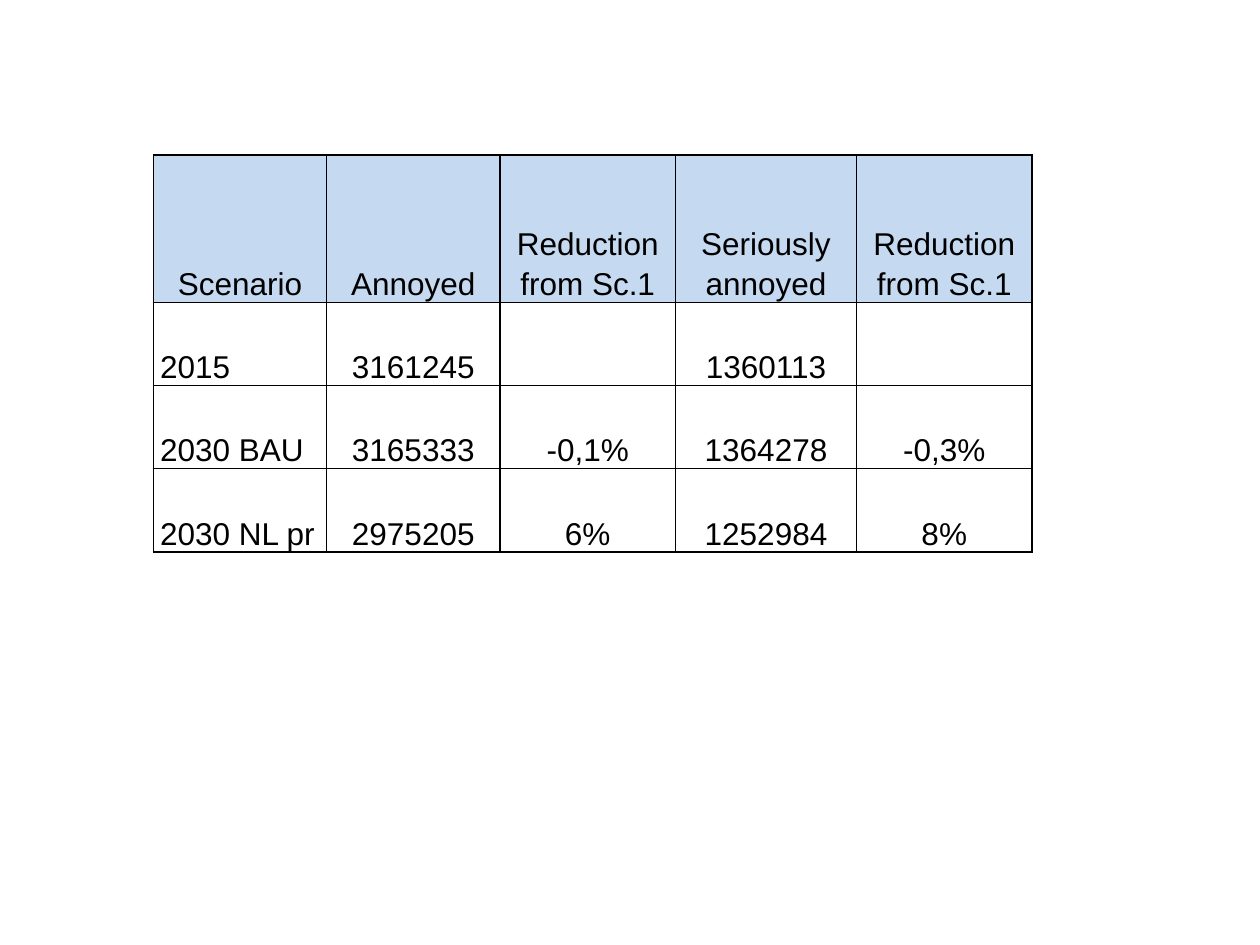
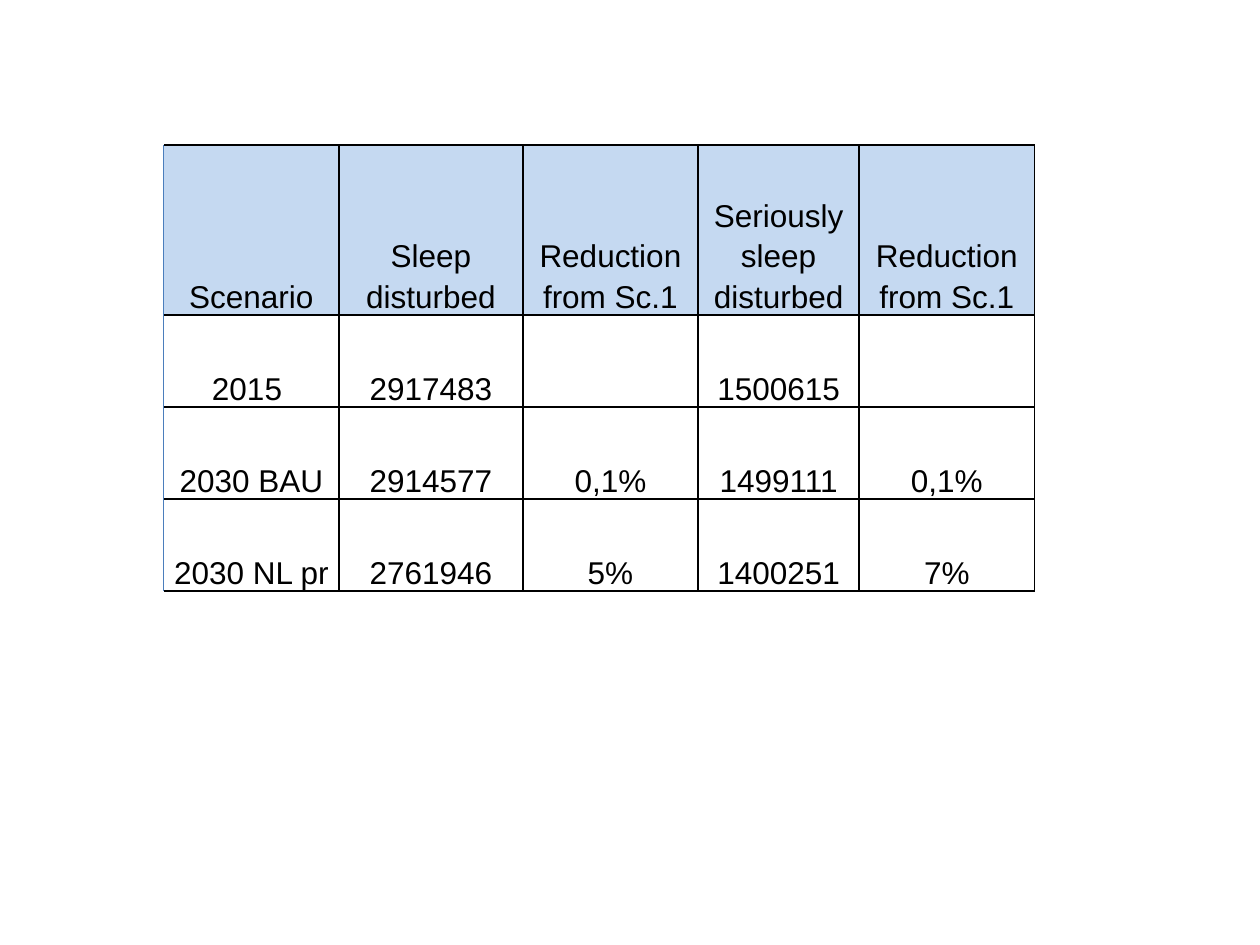
from lxml import etree
from pptx import Presentation, util as u
from pptx.dml.color import RGBColor
from pptx.enum import shapes, text
from pptx.oxml.ns import qn

FONT, SIZE, SPACING = "Arial", 18, 1.15
BLACK, HEADER_FILL, EDGE_BLUE = "000000", "C5D9F1", "4B7EBC"
LEFT, CENTER = text.PP_ALIGN.LEFT, text.PP_ALIGN.CENTER

TABLES = [
    {
        "at": (1.22, 1.23),
        "cols": [1.37, 1.38, 1.39, 1.44, 1.39],
        "header_height": 1.17,
        "row_height": 0.66,
        "scenario_align": LEFT,
        "blue_edge": False,
        "rows": [
            ["Scenario", "Annoyed", "Reduction from Sc.1", "Seriously annoyed", "Reduction from Sc.1"],
            ["2015", "3161245", "", "1360113", ""],
            ["2030 BAU", "3165333", "-0,1%", "1364278", "-0,3%"],
            ["2030 NL pr", "2975205", "6%", "1252984", "8%"],
        ],
    },
    {
        "at": (1.3, 1.15),
        "cols": [1.39, 1.46, 1.39, 1.28, 1.39],
        "header_height": 1.35,
        "row_height": 0.73,
        "scenario_align": CENTER,
        "blue_edge": True,
        "rows": [
            ["Scenario", "Sleep disturbed", "Reduction from Sc.1", "Seriously sleep disturbed", "Reduction from Sc.1"],
            ["2015 ", "2917483", "", "1500615", ""],
            ["2030 BAU", "2914577", "0,1%", "1499111", "0,1%"],
            ["2030 NL pr", "2761946", "5%", "1400251", "7%"],
        ],
    },
]


def rgb(value):
    return RGBColor.from_string(value)


def set_borders(cell, open_left):
    tcPr = cell._tc.get_or_add_tcPr()
    for side in "LRTB":
        ln = etree.SubElement(tcPr, qn(f"a:ln{side}"), w=str(u.Pt(1)))
        if side == "L" and open_left:
            etree.SubElement(ln, qn("a:noFill"))
        else:
            fill = etree.SubElement(ln, qn("a:solidFill"))
            etree.SubElement(fill, qn("a:srgbClr"), val=BLACK)


def fill_cell(cell, value, align, header, open_left):
    set_borders(cell, open_left)
    if header:
        cell.fill.solid()
        cell.fill.fore_color.rgb = rgb(HEADER_FILL)
    else:
        cell.fill.background()
    cell.margin_left = cell.margin_right = u.Inches(0.05)
    cell.margin_top = cell.margin_bottom = 0
    cell.vertical_anchor = text.MSO_ANCHOR.BOTTOM
    if not value:
        return
    p = cell.text_frame.paragraphs[0]
    p.alignment = align
    p.line_spacing = SPACING
    r = p.add_run()
    r.text = value
    r.font.name = FONT
    r.font.size = u.Pt(SIZE)
    r.font.bold = False
    r.font.color.rgb = rgb(BLACK)


def add_blue_edge(s, left, top, height):
    line = s.shapes.add_connector(
        shapes.MSO_CONNECTOR.STRAIGHT,
        u.Inches(left), u.Inches(top), u.Inches(left), u.Inches(top + height))
    line.line.color.rgb = rgb(EDGE_BLUE)
    line.line.width = u.Pt(0.75)
    etree.SubElement(line._element.spPr, qn("a:effectLst"))


def add_scenario_table(s, data):
    left, top = data["at"]
    rows, cols = data["rows"], data["cols"]
    heights = [data["header_height"]] + [data["row_height"]] * (len(rows) - 1)
    box = [u.Inches(v) for v in (left, top, sum(cols), sum(heights))]
    table = s.shapes.add_table(len(rows), len(cols), *box).table
    table.horz_banding = False
    table.first_row = False
    for col, width in zip(table.columns, cols):
        col.width = u.Inches(width)
    for i, (values, height) in enumerate(zip(rows, heights)):
        table.rows[i].height = u.Inches(height)
        for j, value in enumerate(values):
            align = data["scenario_align"] if i and j == 0 else CENTER
            open_left = data["blue_edge"] and j == 0
            fill_cell(table.cell(i, j), value, align, i == 0, open_left)
    if data["blue_edge"]:
        add_blue_edge(s, left, top, sum(heights))


def main():
    prs = Presentation()
    prs.slide_width, prs.slide_height = u.Inches(10), u.Inches(7.5)
    for data in TABLES:
        add_scenario_table(prs.slides.add_slide(prs.slide_layouts[6]), data)
    prs.save("out.pptx")


if __name__ == "__main__":
    main()
